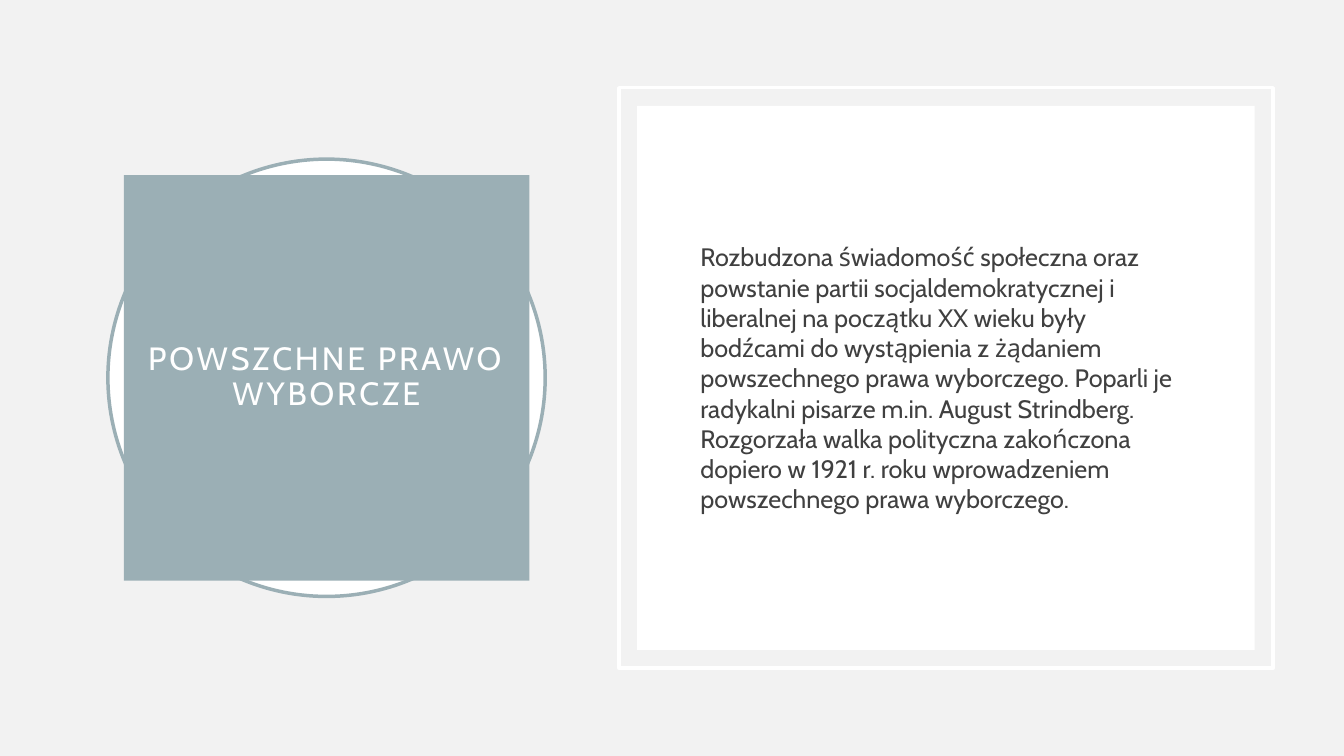
from pptx import Presentation
from pptx import util as u
from pptx.dml.color import RGBColor
from pptx.enum import shapes, text

COLORS = {"background": "F2F2F2", "accent": "9BAFB5", "white": "FFFFFF", "body": "404040"}
FONT = "Cabin"
Cm = u.Cm


def add_outline_shape(kind, box, fill=None, line=None):
    """Add a preset shape; a missing fill or line stays invisible."""
    shape = slide.shapes.add_shape(kind, *map(Cm, box))
    shape.shadow.inherit = False
    if fill:
        shape.fill.solid()
        shape.fill.fore_color.rgb = RGBColor.from_string(COLORS[fill])
    else:
        shape.fill.background()
    if line:
        shape.line.color.rgb = RGBColor.from_string(COLORS[line])
        shape.line.width = u.Pt(2.5)
    else:
        shape.line.fill.background()
    return shape


def write_paragraph(frame, wording, size, color, align, inset):
    frame.word_wrap = True
    frame.auto_size = text.MSO_AUTO_SIZE.NONE
    frame.vertical_anchor = text.MSO_ANCHOR.MIDDLE
    frame.margin_left = frame.margin_right = Cm(inset[0])
    frame.margin_top = frame.margin_bottom = Cm(inset[1])
    paragraph = frame.paragraphs[0]
    paragraph.alignment = align
    run = paragraph.add_run()
    run.text = wording
    run.font.name = FONT
    run.font.size = u.Pt(size)
    run.font.color.rgb = RGBColor.from_string(COLORS[color])
    return paragraph


prs = Presentation()
prs.slide_width, prs.slide_height = Cm(33.87), Cm(19.05)
slide = prs.slides.add_slide(prs.slide_layouts[5])
slide.background.fill.solid()
slide.background.fill.fore_color.rgb = RGBColor.from_string(COLORS["background"])

# Title block: a square over a slightly larger ring
ring_left, ring_top, ring_size, ring_gap = 2.72, 4.01, 11.02, 0.4
ring = add_outline_shape(shapes.MSO_SHAPE.OVAL, (ring_left, ring_top, ring_size, ring_size),
                         fill="white", line="accent")

title = slide.shapes.title
title.left, title.top = Cm(ring_left + ring_gap), Cm(ring_top + ring_gap)
title.width = title.height = Cm(ring_size - 2 * ring_gap)
title.fill.solid()
title.fill.fore_color.rgb = RGBColor.from_string(COLORS["accent"])
title.element.addprevious(ring.element)
heading = write_paragraph(title.text_frame, "POWSZCHNE PRAWO WYBORCZE", 23, "white",
                          text.PP_ALIGN.CENTER, (0.5, 0.5))
heading.line_spacing = 0.9
heading.runs[0].font.language_id = None
heading.runs[0].font._element.set("spc", "200")

# Framed panel
left, top, width, height = 15.6, 2.21, 16.48, 14.63
panel_gap = 0.46
add_outline_shape(shapes.MSO_SHAPE.RECTANGLE, (left, top, width, height), line="white")
add_outline_shape(shapes.MSO_SHAPE.RECTANGLE,
                  (left + panel_gap, top + panel_gap,
                   width - 2 * panel_gap, height - 2 * panel_gap), fill="white")

body = slide.shapes.add_textbox(Cm(17.4), Cm(ring_top), Cm(12.93), Cm(ring_size))
story = write_paragraph(
    body.text_frame,
    "Rozbudzona świadomość społeczna oraz powstanie partii socjaldemokratycznej i "
    "liberalnej na początku XX wieku były bodźcami do wystąpienia z żądaniem "
    "powszechnego prawa wyborczego. Poparli je radykalni pisarze m.in. August Strindberg. "
    "Rozgorzała walka polityczna zakończona dopiero w 1921 r. roku wprowadzeniem "
    "powszechnego prawa wyborczego.",
    18, "body", text.PP_ALIGN.LEFT, (0.25, 0.13))
story.space_before = u.Pt(10)

prs.save("out.pptx")
